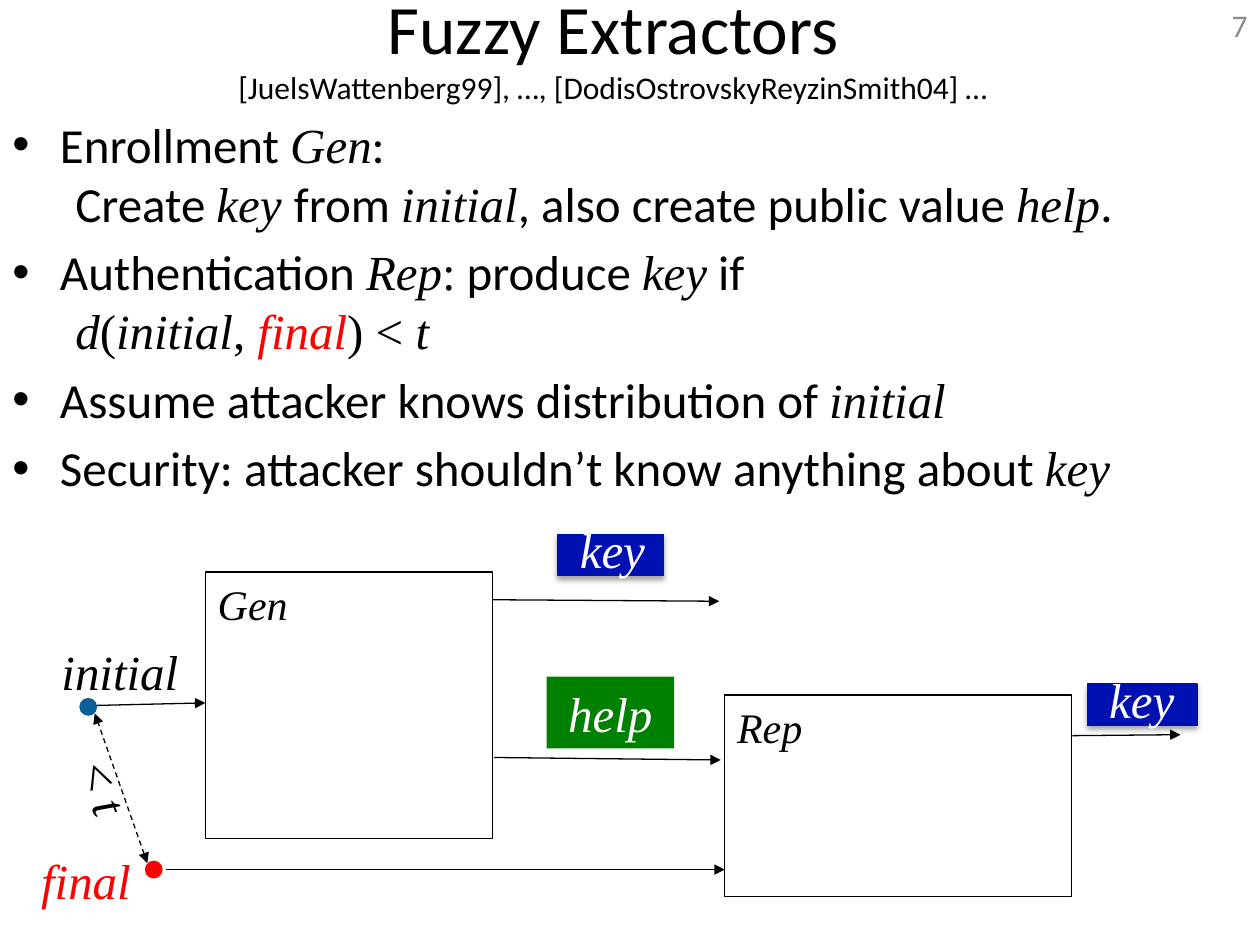
from lxml import etree
from pptx import Presentation
from pptx.dml.color import RGBColor
from pptx.enum.dml import MSO_LINE
from pptx.enum.shapes import MSO_CONNECTOR, MSO_SHAPE
from pptx.enum.text import MSO_ANCHOR, PP_ALIGN
from pptx.oxml.ns import qn
from pptx.util import Cm, Pt

RECT, OVAL = MSO_SHAPE.RECTANGLE, MSO_SHAPE.OVAL
STRAIGHT, DASH = MSO_CONNECTOR.STRAIGHT, MSO_LINE.DASH
LEFT, MID, RIGHT = PP_ALIGN.LEFT, PP_ALIGN.CENTER, PP_ALIGN.RIGHT
TOP, MIDDLE = MSO_ANCHOR.TOP, MSO_ANCHOR.MIDDLE


class Theme:
    sans, serif = "Calibri", "Times New Roman"
    black, white, grey = "000000", "FFFFFF", "8C8C8C"
    red, blue, navy, green = "FF0000", "0B609A", "0011B2", "008000"
    title, body, label, small = 39.6, 28, 24, 18
    line = 0.75


# Run styles: font, italic, colour
SANS = (Theme.sans, False, Theme.black)
ROMAN = (Theme.serif, False, Theme.black)
MATH = (Theme.serif, True, Theme.black)
RED = (Theme.serif, True, Theme.red)
WHITE = (Theme.serif, True, Theme.white)
GREY = (Theme.sans, False, Theme.grey)

TITLE = "Fuzzy Extractors"
CITE = "[JuelsWattenberg99], …, [DodisOstrovskyReyzinSmith04] …"
POINTS = [
    [("Enrollment ", SANS), ("Gen", MATH), (": \n\tCreate ", SANS), ("key ", MATH),
     ("from ", SANS), ("initial", MATH), (", also create public value ", SANS),
     ("help", MATH), (".", SANS)],
    [("Authentication ", SANS), ("Rep", MATH), (":", ROMAN), (" produce ", SANS),
     ("key", MATH), (" if \n\t", SANS), ("d", MATH), ("(", ROMAN), ("initial", MATH),
     (", ", ROMAN), ("final", RED), (") < ", ROMAN), ("t", MATH)],
    [("Assume attacker knows distribution of ", SANS), ("initial", MATH)],
    [("Security: attacker shouldn’t know anything about ", SANS), ("key", MATH)],
]

# Diagram parts, in cm
ARROWS = [
    (1.96, 14.22, 4.14, 14.17),
    (9.93, 12.09, 14.5, 12.12),
    (9.96, 15.27, 14.53, 15.32),
    (3.35, 17.53, 14.61, 17.53),
    (21.62, 14.83, 23.8, 14.81),
]
GAP = (2.97, 17.4, 1.91, 14.38)
DOT = 0.36
DOTS = [(1.6, 14.07, Theme.blue), (2.92, 17.35, Theme.red)]
BOXES = [("Gen", (4.14, 11.53, 5.79, 5.38)), ("Rep", (14.61, 14.01, 6.99, 4.06))]
KEYS = [(11.25, 10.77, 2.13, 0.84), (21.92, 13.79, 2.21, 0.84)]
HELP = (11.02, 13.64, 2.57, 1.45)
TAGS = [
    ([("initial", MATH)], (0.99, 12.8, 3, 1.45), 0),
    ([("final", RED)], (0.58, 17.02, 2.59, 1.45), 0),
    ([("< ", ROMAN), ("t", MATH)], (1.3, 15.19, 1.65, 1.45), 69.7),
]


def color(code):
    return RGBColor.from_string(code)


def node(parent, tag, **attrs):
    return etree.SubElement(parent, qn(tag), attrs)


def add_runs(para, runs, size):
    """Add (text, style) runs; a newline in the text is a line break."""
    for text, (font, slant, shade) in runs:
        for i, part in enumerate(text.split("\n")):
            if i:
                para.add_line_break()
            run = para.add_run()
            run.text = part
            run.font.name, run.font.size = font, Pt(size)
            run.font.italic, run.font.color.rgb = slant, color(shade)


def add_text(slide, runs, place, size=Theme.body, align=LEFT, anchor=TOP, wrap=False):
    box = slide.shapes.add_textbox(*map(Cm, place))
    frame = box.text_frame
    frame.word_wrap, frame.vertical_anchor = wrap, anchor
    frame.paragraphs[0].alignment = align
    add_runs(frame.paragraphs[0], runs, size)
    return box


def add_points(slide, place):
    frame = add_text(slide, [], place, wrap=True).text_frame
    for i, runs in enumerate(POINTS):
        para = frame.add_paragraph() if i else frame.paragraphs[0]
        para.space_before = Pt(5.6)
        props = para._p.get_or_add_pPr()
        props.set("marL", str(Cm(0.96)))
        props.set("indent", str(Cm(-0.96)))
        node(props, "a:buFont", typeface="Arial")
        node(props, "a:buChar", char="•")
        add_runs(para, runs, Theme.body)


def add_shape(slide, kind, place, fill=None, edge=None):
    shape = slide.shapes.add_shape(kind, *map(Cm, place))
    shape.shadow.inherit = False
    if fill:
        shape.fill.solid()
        shape.fill.fore_color.rgb = color(fill)
    else:
        shape.fill.background()
    if edge:
        shape.line.color.rgb, shape.line.width = color(edge), Pt(Theme.line)
    else:
        shape.line.fill.background()
    return shape


def add_arrow(slide, ends, both=False):
    """Draw an arrow; one with two heads is dashed."""
    arrow = slide.shapes.add_connector(STRAIGHT, *map(Cm, ends))
    arrow.line.color.rgb, arrow.line.width = color(Theme.black), Pt(Theme.line)
    if both:
        arrow.line.dash_style = DASH
    edge = arrow.line._get_or_add_ln()
    for tag in ("a:headEnd", "a:tailEnd")[0 if both else 1:]:
        node(edge, tag, type="triangle")
    node(arrow._element.spPr, "a:effectLst")


def add_key(slide, place):
    shape = add_shape(slide, RECT, place, Theme.navy, Theme.navy)
    glow = shape._element.spPr.find(qn("a:effectLst"))
    shade = node(glow, "a:outerShdw", blurRad=str(Pt(3.1)), dist=str(Pt(1.8)),
                 dir="5400000", rotWithShape="0")
    node(node(shade, "a:srgbClr", val=Theme.black), "a:alpha", val="35000")
    left, top, wide, _ = place
    add_text(slide, [("key", WHITE)], (left + 0.19, top - 0.42, wide - 0.1, 1.45))


def main():
    deck = Presentation()
    deck.slide_width, deck.slide_height = Cm(25.4), Cm(19.05)
    slide = deck.slides.add_slide(deck.slide_layouts[6])

    head = add_text(slide, [(TITLE, SANS)], (-1.37, -0.28, 27.46, 2.39),
                    Theme.title, MID, MIDDLE, True)
    para = head.text_frame.paragraphs[0]
    para.add_line_break()
    add_runs(para, [(CITE, SANS)], Theme.small)
    add_points(slide, (0, 2.18, 26.39, 7.92))

    for ends in ARROWS:
        add_arrow(slide, ends)
    add_arrow(slide, GAP, both=True)
    for left, top, fill in DOTS:
        add_shape(slide, OVAL, (left, top, DOT, DOT), fill)
    for name, place in BOXES:
        add_shape(slide, RECT, place, edge=Theme.black)
        add_text(slide, [(name, MATH)], (*place[:2], 2.2, 1.27), Theme.label)
    for runs, place, turn in TAGS:
        add_text(slide, runs, place).rotation = turn

    block = add_shape(slide, RECT, HELP, Theme.green).text_frame
    block.word_wrap = False
    block.paragraphs[0].alignment = MID
    add_runs(block.paragraphs[0], [("help", WHITE)], Theme.body)
    for place in KEYS:
        add_key(slide, place)
    add_text(slide, [("7", GREY)], (19.48, 0, 5.92, 1.02), Theme.small, RIGHT, MIDDLE, True)
    deck.save("out.pptx")


if __name__ == "__main__":
    main()
